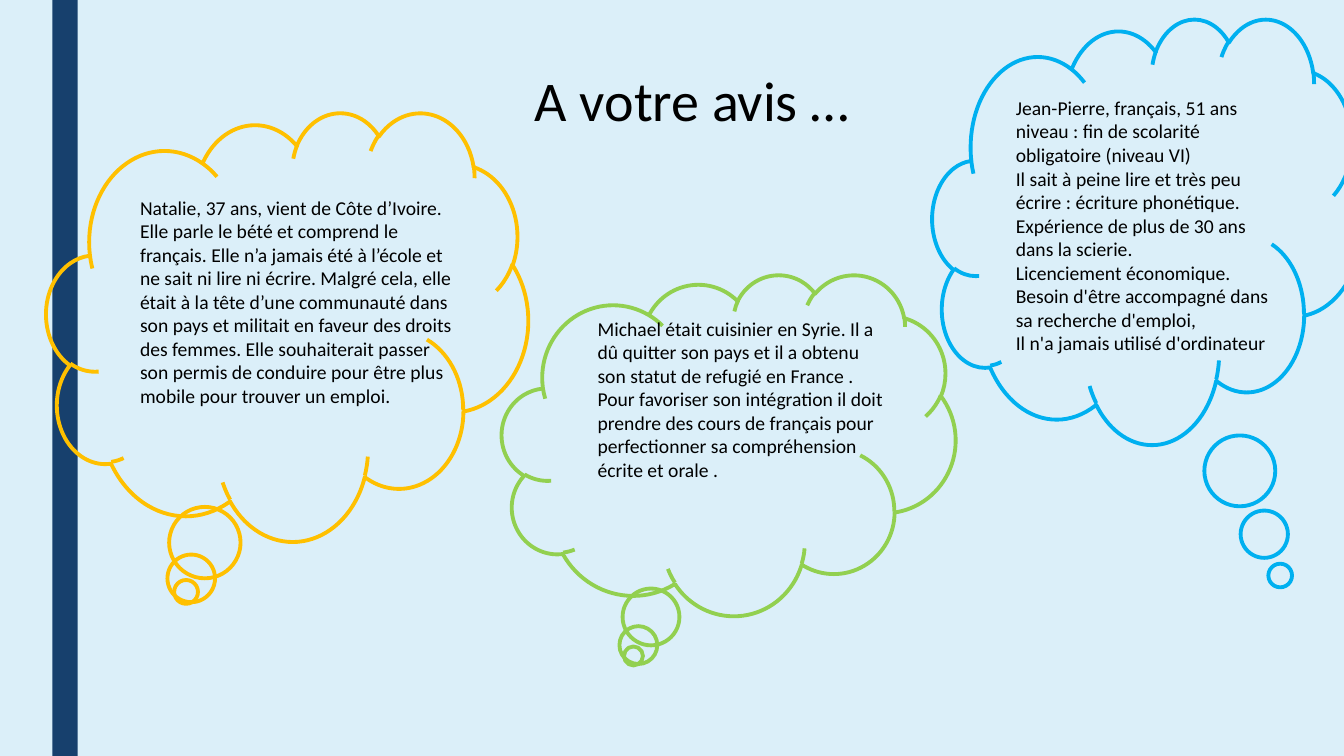
from dataclasses import dataclass

from pptx import Presentation
from pptx import util as u
from pptx.dml.color import RGBColor
from pptx.enum import shapes, text


@dataclass(frozen=True)
class Theme:
    font: str = "Calibri"
    title_size: float = 40
    body_size: float = 14
    outline: float = 2.75
    ink: str = "000000"
    background: str = "DBEFF9"
    bar: str = "17406D"
    yellow: str = "FFC000"
    green: str = "92D050"
    blue: str = "00B0F0"


def rgb(value):
    return RGBColor.from_string(value)


def cm_box(box):
    return [u.Cm(v) for v in box]


def write(tf, paragraphs, *, font, size, color, align=text.PP_ALIGN.LEFT):
    """Fill a text frame with one formatted paragraph per string."""
    tf.word_wrap = True
    tf.auto_size = text.MSO_AUTO_SIZE.NONE
    tf.vertical_anchor = text.MSO_ANCHOR.TOP
    for i, content in enumerate(paragraphs):
        p = tf.paragraphs[0] if i == 0 else tf.add_paragraph()
        p.alignment = align
        r = p.add_run()
        r.text = content
        r.font.name = font
        r.font.size = u.Pt(size)
        r.font.color.rgb = rgb(color)


class SlideBuilder:
    def __init__(self, slide, theme):
        self.slide = slide
        self.theme = theme
        fill = slide.background.fill
        fill.solid()
        fill.fore_color.rgb = rgb(theme.background)

    def title(self, content, box):
        sp = self.slide.shapes.title
        sp.left, sp.top, sp.width, sp.height = cm_box(box)
        t = self.theme
        write(sp.text_frame, [content], font=t.font, size=t.title_size,
              color=t.ink, align=text.PP_ALIGN.CENTER)

    def bar(self, box):
        sp = self.slide.shapes.add_shape(shapes.MSO_SHAPE.RECTANGLE, *cm_box(box))
        sp.shadow.inherit = False
        sp.fill.solid()
        sp.fill.fore_color.rgb = rgb(self.theme.bar)
        sp.line.fill.background()

    def cloud(self, box, color, tail):
        """Outline a thought cloud; tail is its tip's offset from the centre."""
        sp = self.slide.shapes.add_shape(shapes.MSO_SHAPE.CLOUD_CALLOUT, *cm_box(box))
        sp.shadow.inherit = False
        sp.fill.background()
        sp.line.color.rgb = rgb(color)
        sp.line.width = u.Pt(self.theme.outline)
        sp.adjustments[0], sp.adjustments[1] = tail

    def story(self, paragraphs, box):
        sp = self.slide.shapes.add_textbox(*cm_box(box))
        t = self.theme
        write(sp.text_frame, paragraphs, font=t.font, size=t.body_size, color=t.ink)


NATALIE = [
    "Natalie, 37 ans, vient de Côte d’Ivoire. Elle parle le bété et comprend le "
    "français. Elle n’a jamais été à l’école et ne sait ni lire ni écrire. Malgré "
    "cela, elle était à la tête d’une communauté dans son pays et militait en faveur "
    "des droits des femmes. Elle souhaiterait passer son permis de conduire pour être "
    "plus mobile pour trouver un emploi.",
]
MICHAEL = [
    "Michael était cuisinier en Syrie. Il a dû quitter son pays et il a obtenu son "
    "statut de refugié en France . Pour favoriser son intégration il doit prendre des "
    "cours de français pour perfectionner sa compréhension écrite et orale .",
]
JEAN_PIERRE = [
    "Jean-Pierre, français, 51 ans",
    "niveau : fin de scolarité obligatoire (niveau VI)",
    "Il sait à peine lire et très peu écrire : écriture phonétique.",
    "Expérience de plus de 30 ans dans la scierie.",
    "Licenciement économique.",
    "Besoin d'être accompagné dans sa recherche d'emploi,",
    "Il n'a jamais utilisé d'ordinateur",
]


def main():
    prs = Presentation()
    prs.slide_width, prs.slide_height = u.Cm(33.87), u.Cm(19.05)
    theme = Theme()
    title_only = prs.slide_layouts[5]
    builder = SlideBuilder(prs.slides.add_slide(title_only), theme)

    builder.bar((1.32, 0, 0.64, 19.05))
    builder.title("A votre avis …", (12.07, 1.52, 10.74, 1.96))

    lower_left, lower_right = (-0.21, 0.62), (0.31, 0.81)
    people = [
        (MICHAEL, theme.green, lower_left,
         (12.65, 6.91, 11.43, 8.59), (14.81, 7.85, 7.75, 4.45)),
        (JEAN_PIERRE, theme.blue, lower_right,
         (23.5, 0.46, 10.82, 10.72), (25.35, 2.29, 7.11, 7.62)),
        (NATALIE, theme.yellow, lower_left,
         (1.17, 2.82, 12.14, 10.8), (3.28, 4.8, 8.46, 7.01)),
    ]
    for paragraphs, color, tail, cloud_box, story_box in people:
        builder.cloud(cloud_box, color, tail)
        builder.story(paragraphs, story_box)

    prs.save("out.pptx")


if __name__ == "__main__":
    main()
